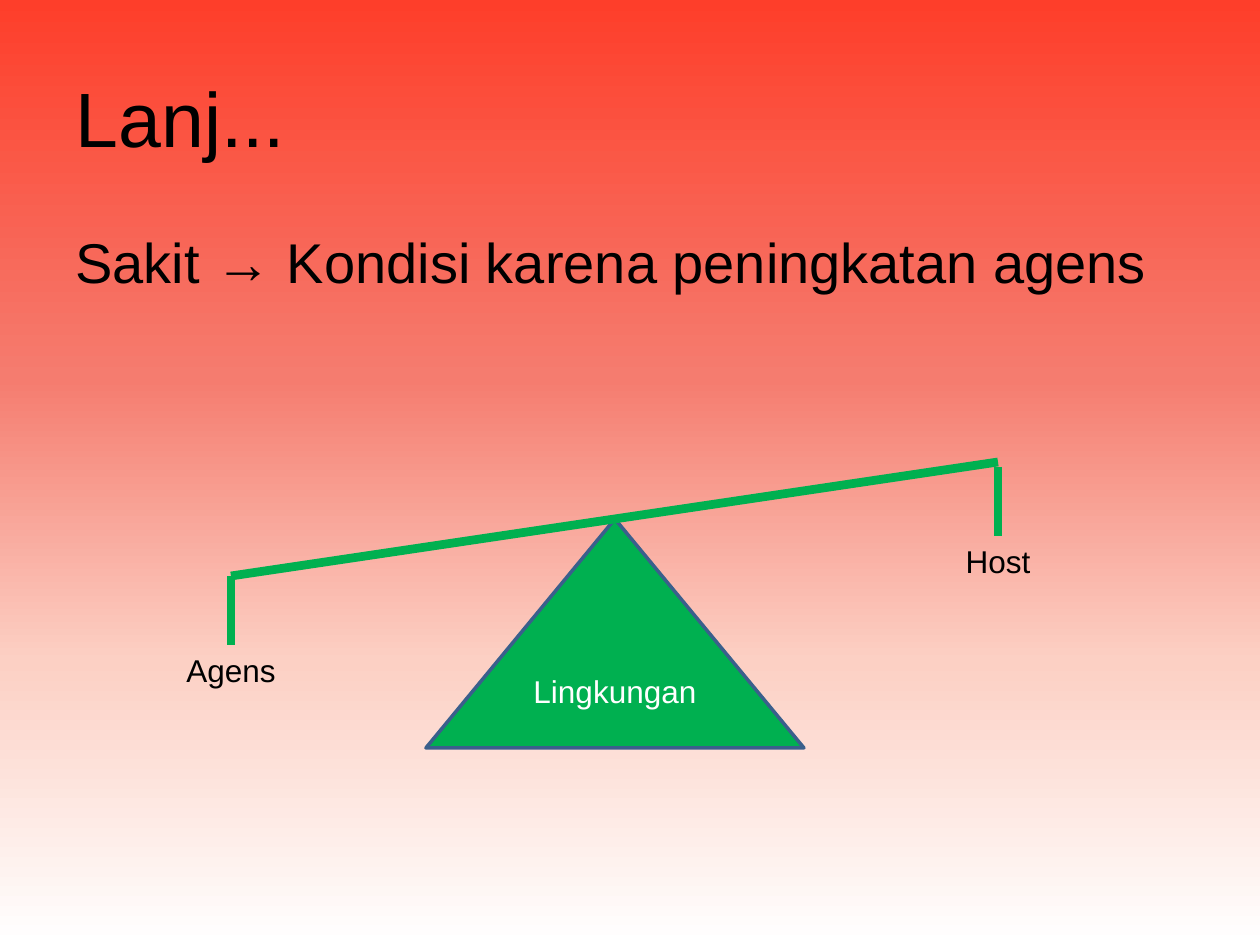
from copy import deepcopy

from pptx import Presentation
from pptx import util as u
from pptx.dml.color import RGBColor
from pptx.enum import shapes, text
from pptx.oxml.ns import qn

PX = 9144000 // 1260  # EMU per pixel, 126 px to the inch
BLACK = RGBColor(0x00, 0x00, 0x00)
WHITE = RGBColor(0xFF, 0xFF, 0xFF)
GREEN = RGBColor(0x00, 0xB0, 0x50)
BLUE = RGBColor(0x3A, 0x5F, 0x8C)
BACKGROUND_STOPS = [
    (0, RGBColor(0xFE, 0x3E, 0x2A)),
    (0.4, RGBColor(0xF5, 0x7C, 0x6F)),
    (0.7, RGBColor(0xFC, 0xD0, 0xC4)),
    (1, WHITE),
]


def px(*lengths):
    return [u.Emu(length * PX) for length in lengths]


def write(shape, words, size, color, frame_format, align):
    frame = shape.text_frame
    for name, value in {"word_wrap": True, **frame_format}.items():
        setattr(frame, name, value)
    paragraph = frame.paragraphs[0]
    paragraph.alignment = align
    run = paragraph.add_run()
    run.text = words
    for name, value in {"name": "Arial", "size": u.Pt(size)}.items():
        setattr(run.font, name, value)
    run.font.color.rgb = color
    return paragraph


presentation = Presentation()
presentation.slide_width, presentation.slide_height = px(1260, 945)
slide = presentation.slides.add_slide(presentation.slide_layouts[5])
LEFT, CENTER = text.PP_ALIGN.LEFT, text.PP_ALIGN.CENTER
MIDDLE = {"vertical_anchor": text.MSO_ANCHOR.MIDDLE}
TOP = {"vertical_anchor": text.MSO_ANCHOR.TOP}

# Background gradient, top to bottom
fill = slide.background.fill
fill.gradient()
fill.gradient_angle = 270
stop_list = slide.element.find(".//" + qn("a:gsLst"))
while len(stop_list) < len(BACKGROUND_STOPS):
    stop_list.append(deepcopy(stop_list[0]))
for stop, (position, color) in zip(fill.gradient_stops, BACKGROUND_STOPS):
    stop.position = position
    stop.color.rgb = color

# Title
title = slide.shapes.title
title.left, title.top, title.width, title.height = px(63, 38, 1134, 157)
write(title, "Lanj...", 44, BLACK, MIDDLE, LEFT)

# Statement with a hanging indent
statement = slide.shapes.add_textbox(*px(63, 221, 1134, 168))
paragraph = write(statement, "Sakit → Kondisi karena peningkatan agens", 32, BLACK, TOP, LEFT)
paragraph.space_before = u.Pt(6.4)
properties = paragraph._p.get_or_add_pPr()
indent = 234 * PX
properties.set("marL", str(indent))
properties.set("indent", str(-indent))

# Pivot of the balance
pivot = slide.shapes.add_shape(shapes.MSO_SHAPE.ISOSCELES_TRIANGLE, *px(426, 519, 378, 229))
pivot.shadow.inherit = False
pivot.fill.solid()
pivot.fill.fore_color.rgb = GREEN
pivot.line.color.rgb = BLUE
pivot.line.width = u.Pt(2)
write(pivot, "Lingkungan", 18, WHITE, MIDDLE, CENTER)

# Beam and its two hangers
AGENT_X, HOST_X = 231, 998
for ends in [
    (AGENT_X, 576, HOST_X, 462),
    (AGENT_X, 576, AGENT_X, 645),
    (HOST_X, 467, HOST_X, 536),
]:
    bar = slide.shapes.add_connector(shapes.MSO_CONNECTOR.STRAIGHT, *px(*ends))
    bar.line.color.rgb = GREEN
    bar.line.width = u.Pt(5)
    bar._element.spPr.add_effectLst() if hasattr(bar._element.spPr, "add_effectLst") else \
        bar._element.spPr.append(bar._element.spPr.makeelement(qn("a:effectLst"), {}))

# Labels centred under the hangers
LABEL_WIDTH = 274
for words, center, top in [("Agens", AGENT_X, 645), ("Host", HOST_X, 536)]:
    label = slide.shapes.add_textbox(*px(center - LABEL_WIDTH // 2, top, LABEL_WIDTH, 50))
    write(label, words, 18, BLACK, {"auto_size": text.MSO_AUTO_SIZE.SHAPE_TO_FIT_TEXT}, CENTER)

presentation.save("out.pptx")
